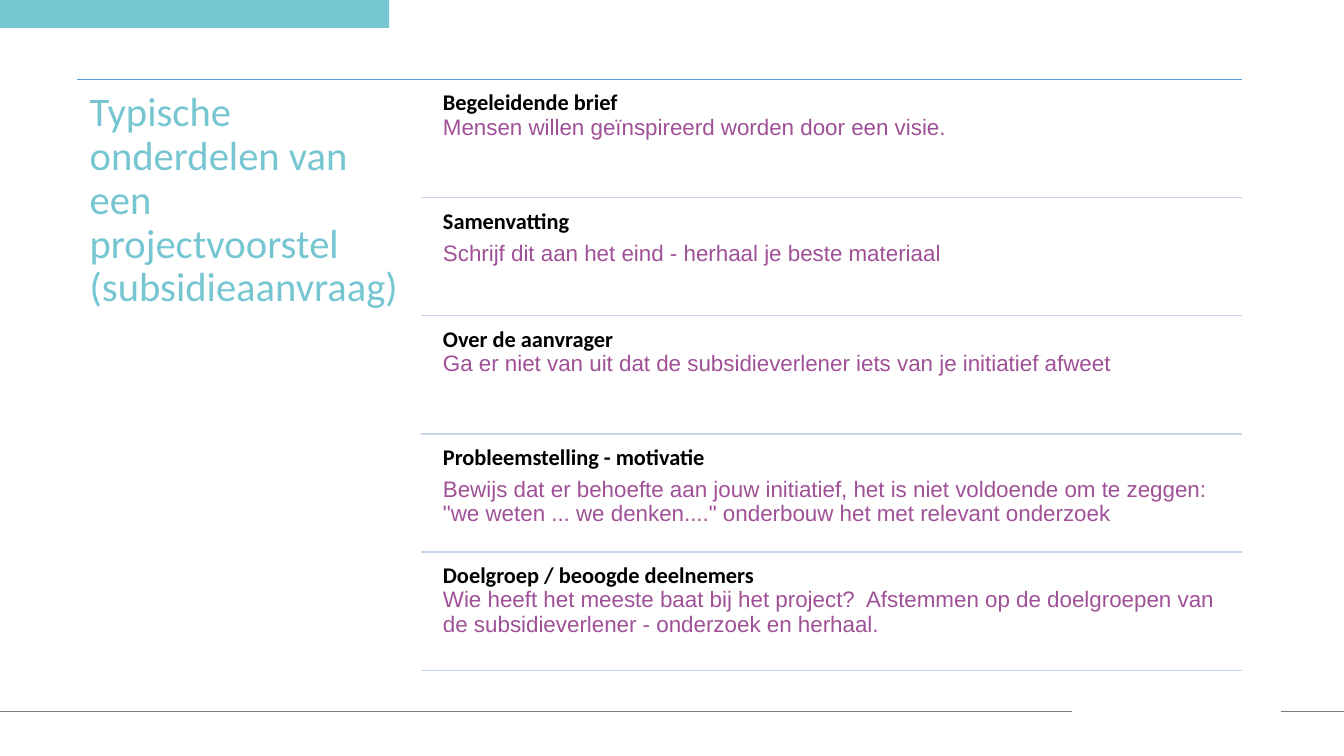
import pptx
import pptx.util
import pptx.dml.color
import pptx.enum.shapes
import pptx.oxml.ns
from lxml import etree

Pt = pptx.util.Pt
RGB = pptx.dml.color.RGBColor

TEAL = RGB(0x76, 0xC6, 0xD2)
PURPLE = RGB(0xA0, 0x50, 0x96)
BLACK = RGB(0x00, 0x00, 0x00)
GREY = RGB(0x79, 0x79, 0x79)
BLUE = RGB(0x5B, 0x9B, 0xD5)
PALE_BLUE = RGB(0xC4, 0xD5, 0xEB)

WIDTH, HEIGHT = 960, 540
TITLE = "Typische onderdelen van een projectvoorstel (subsidieaanvraag)"
# Heading, explanation, and whether the explanation is a paragraph of its own
PARTS = [
    ("Begeleidende brief",
     "Mensen willen geïnspireerd worden door een visie.", False),
    ("Samenvatting",
     "Schrijf dit aan het eind - herhaal je beste materiaal", True),
    ("Over de aanvrager",
     "Ga er niet van uit dat de subsidieverlener iets van je initiatief afweet", False),
    ("Probleemstelling - motivatie",
     "Bewijs dat er behoefte aan jouw initiatief, het is niet voldoende om te zeggen: "
     "\"we weten ... we denken....\" onderbouw het met relevant onderzoek", True),
    ("Doelgroep / beoogde deelnemers",
     "Wie heeft het meeste baat bij het project?  Afstemmen op de doelgroepen van "
     "de subsidieverlener - onderzoek en herhaal.", False),
]


def add_rule(s, x1, x2, y, color, weight):
    line = s.shapes.add_connector(
        pptx.enum.shapes.MSO_CONNECTOR.STRAIGHT, Pt(x1), Pt(y), Pt(x2), Pt(y))
    line.line.color.rgb = color
    line.line.width = Pt(weight)
    etree.SubElement(line._element.spPr, pptx.oxml.ns.qn("a:effectLst"))


def add_text_frame(s, x, y, w, h, inset):
    tf = s.shapes.add_textbox(Pt(x), Pt(y), Pt(w), Pt(h)).text_frame
    tf.word_wrap = True
    tf.margin_left = tf.margin_right = tf.margin_top = tf.margin_bottom = Pt(inset)
    return tf


def set_font(font, name, color, bold=False):
    font.name = name
    font.color.rgb = color
    font.bold = bold


def format_paragraph(p, size):
    p.line_spacing = 0.9
    p.space_after = Pt(size * 0.35)
    p.font.size = Pt(size)


def add_frame(s, w, h):
    # Corner bar
    bar = s.shapes.add_shape(
        pptx.enum.shapes.MSO_SHAPE.RECTANGLE, 0, 0, Pt(278), Pt(20))
    bar.shadow.inherit = False
    bar.fill.solid()
    bar.fill.fore_color.rgb = TEAL
    bar.line.fill.background()
    # Footer line with a gap
    for x1, x2 in ((0, w - 194.5), (w - 45, w)):
        add_rule(s, x1, x2, h - 32, GREY, 0.5)


def add_title(s, x, y, w, h):
    p = add_text_frame(s, x, y, w, h, 8.7).paragraphs[0]
    p.text = TITLE
    format_paragraph(p, 29)
    set_font(p.font, "Calibri", TEAL)


def add_part(s, x, y, w, h, heading, explanation, separate):
    tf = add_text_frame(s, x + 10.8, y + 4, w - 10.8, h - 4, 4.8)
    p = tf.paragraphs[0]
    format_paragraph(p, 16)
    if separate:
        p.text = heading
        set_font(p.font, "Calibri", BLACK, True)
        p = tf.add_paragraph()
        p.text = explanation
        format_paragraph(p, 16)
        set_font(p.font, "Arial", PURPLE)
    else:
        r = p.add_run()
        r.text = heading
        set_font(r.font, "Calibri", BLACK, True)
        p.add_line_break()
        r = p.add_run()
        r.text = explanation
        set_font(r.font, "Arial", PURPLE)
    add_rule(s, x, x + w, y + h, PALE_BLUE, 1)


def add_overview(s, x, y, w, h):
    add_rule(s, x, x + w, y, BLUE, 1)
    add_title(s, x, y, 245.5, h)
    # Equal rows to the right of the title
    row_h = h / len(PARTS)
    for i, part in enumerate(PARTS):
        add_part(s, x + 245.5, y + i * row_h, w - 245.5, row_h, *part)


def main():
    prs = pptx.Presentation()
    prs.slide_width, prs.slide_height = Pt(WIDTH), Pt(HEIGHT)
    s = prs.slides.add_slide(prs.slide_layouts[6])
    add_frame(s, WIDTH, HEIGHT)
    add_overview(s, 55.3, 56.6, 831.7, 422.2)
    prs.save("out.pptx")


if __name__ == "__main__":
    main()
